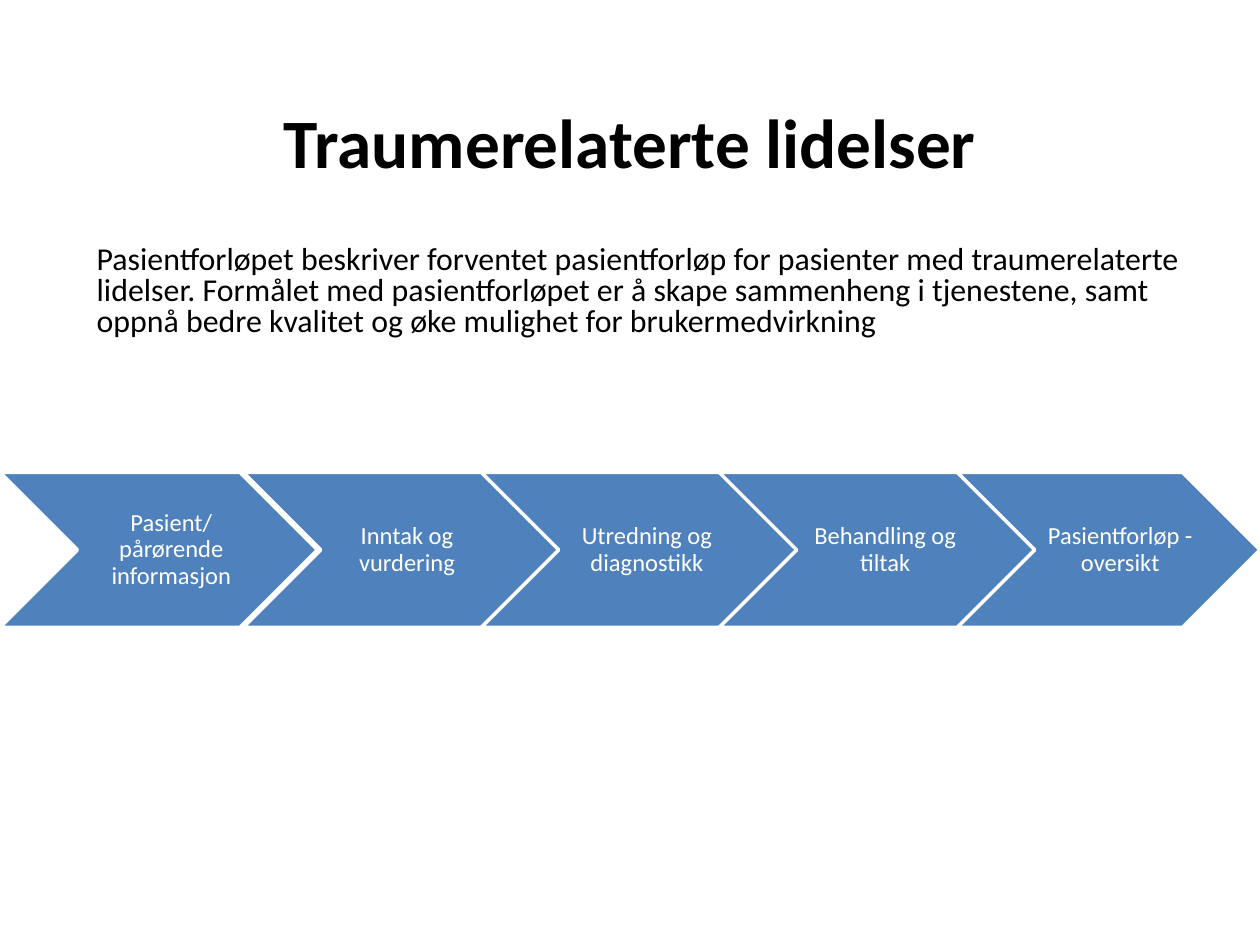
"""Builds a slide with a title, an introduction and a five-step patient pathway."""
from pptx import Presentation
from pptx.dml.color import RGBColor
from pptx.enum.shapes import MSO_SHAPE as Shape
from pptx.enum.text import MSO_ANCHOR as Anchor, PP_ALIGN as Align
from pptx.util import Pt

COLOURS = {"text": "000000", "step": "4F81BD", "light": "FFFFFF"}
FONT = "Calibri"
STEP_TOP, STEP_HEIGHT = 270, 88.5
STEPS = [
    ("Pasient/ pårørende informasjon", 0, 181.4, 48.2, 97.2),
    ("Inntak og vurdering", 139, 187.2, 177.1, 108.7),
    ("Utredning og diagnostikk", 275, 181.4, 320.4, 96.5),
    ("Behandling og tiltak", 411, 187.2, 448.6, 112.3),
    ("Pasientforløp - oversikt", 547, 173, 592.6, 92.9),
]
INTRO = (
    "Pasientforløpet beskriver forventet pasientforløp for pasienter med "
    "traumerelaterte lidelser. Formålet med pasientforløpet er å skape sammenheng "
    "i tjenestene, samt oppnå bedre kvalitet og øke mulighet for brukermedvirkning"
)


def colour(name):
    return RGBColor.from_string(COLOURS[name])


def add_text(page, text, place, size, ink="text", align=Align.CENTER,
             anchor=Anchor.TOP, insets=(7.2, 3.6, 7.2, 3.6), spacing=1.0, bold=False):
    box = page.shapes.add_textbox(*(Pt(length) for length in place))
    frame = box.text_frame
    frame.word_wrap = True
    frame.vertical_anchor = anchor
    (frame.margin_left, frame.margin_top,
     frame.margin_right, frame.margin_bottom) = (Pt(inset) for inset in insets)
    para = frame.paragraphs[0]
    para.alignment = align
    para.line_spacing = spacing
    span = para.add_run()
    span.text = text
    span.font.name = FONT
    span.font.size = Pt(size)
    span.font.bold = bold
    span.font.color.rgb = colour(ink)


def add_step(page, label, left, width, label_left, label_width):
    chevron = page.shapes.add_shape(
        Shape.CHEVRON, Pt(left), Pt(STEP_TOP), Pt(width), Pt(STEP_HEIGHT))
    chevron.shadow.inherit = False
    chevron.adjustments[0] = 0.5
    chevron.fill.solid()
    chevron.fill.fore_color.rgb = colour("step")
    chevron.line.color.rgb = colour("light")
    chevron.line.width = Pt(2)
    add_text(page, label, (label_left, STEP_TOP, label_width, STEP_HEIGHT), 14,
             ink="light", anchor=Anchor.MIDDLE, insets=(3.6, 1.4, 1.4, 1.4), spacing=0.9)


def main():
    deck = Presentation()
    deck.slide_width, deck.slide_height = Pt(720), Pt(540)
    page = deck.slides.add_slide(deck.slide_layouts[6])
    add_text(page, "Traumerelaterte lidelser", (54, 49, 612, 108), 39.6,
             insets=(7.2, 7.6, 7.2, 3.6), bold=True)
    for step in STEPS:
        add_step(page, *step)
    add_text(page, INTRO, (48.2, 128.2, 648, 90), 18.2, align=Align.LEFT,
             insets=(7.2, 12.6, 7.2, 3.6), spacing=0.8)
    deck.save("out.pptx")


if __name__ == "__main__":
    main()
